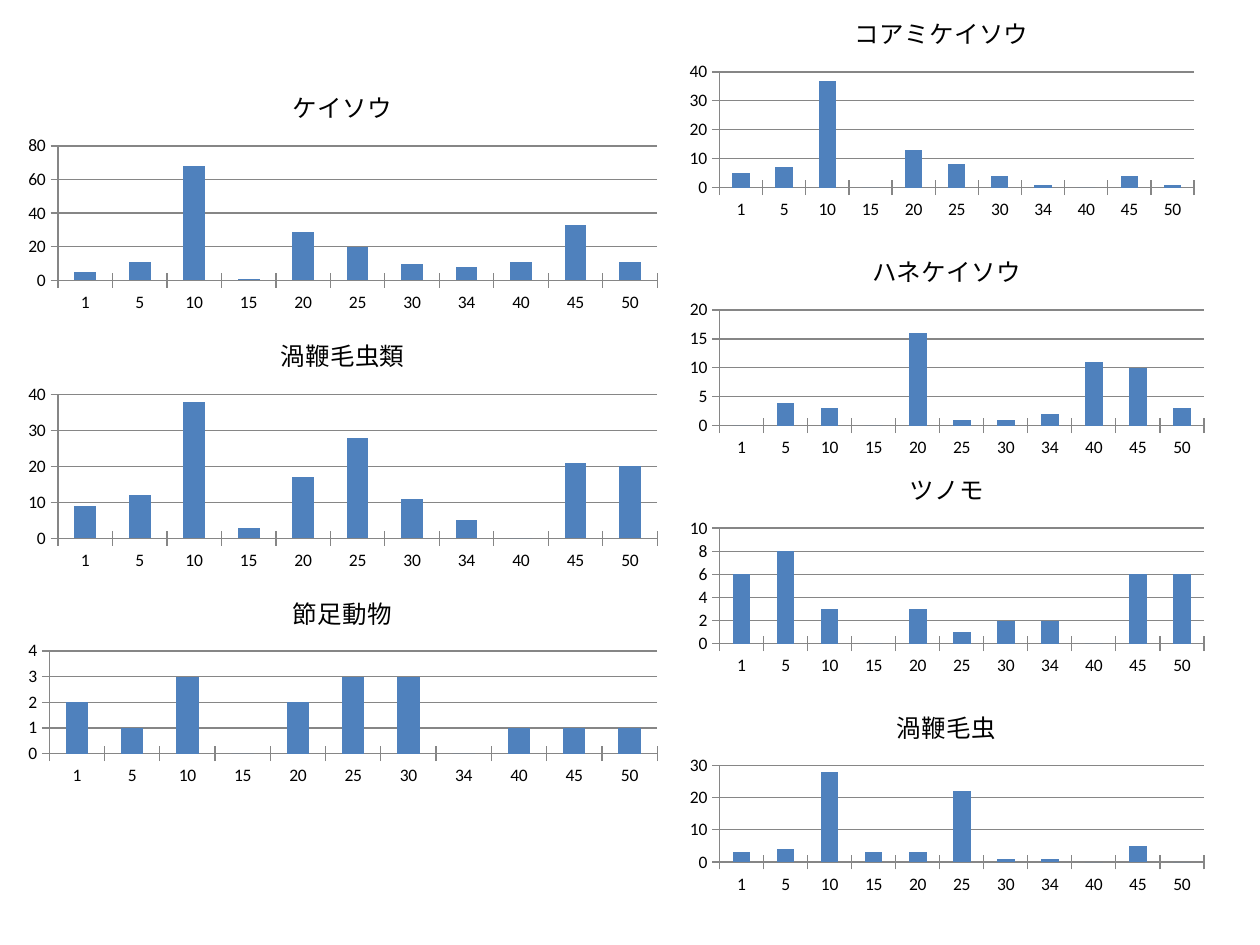
"""Build a slide of seven column charts of plankton counts."""
from dataclasses import dataclass

from pptx import Presentation
from pptx.chart.data import CategoryChartData
from pptx.dml.color import RGBColor
from pptx.enum import chart as ec
from pptx.util import Inches, Pt


@dataclass(frozen=True)
class Theme:
    font: str = "Calibri"
    label_size: Pt = Pt(10)
    title_size: Pt = Pt(14)
    ink: RGBColor = RGBColor(0, 0, 0)
    bar: RGBColor = RGBColor(0x4F, 0x81, 0xBD)
    rule: RGBColor = RGBColor(0x86, 0x86, 0x86)


theme = Theme()
depths = ["1", "5", "10", "15", "20", "25", "30", "34", "40", "45", "50"]
left_x, right_x = 0.12, 5.39
left_w, right_w = 5.2, 4.25

charts = [
    ("ケイソウ", (left_x, 0.55, left_w, 1.97), 80, 20,
     [5, 11, 68, 1, 29, 20, 10, 8, 11, 33, 11]),
    ("渦鞭毛虫類", (left_x, 2.52, left_w, 2.05), 40, 10,
     [9, 12, 38, 3, 17, 28, 11, 5, 0, 21, 20]),
    ("節足動物", (left_x, 4.57, left_w, 1.7), 4, 1,
     [2, 1, 3, 0, 2, 3, 3, 0, 1, 1, 1]),
    ("ツノモ", (right_x, 3.59, right_w, 1.81), 10, 2,
     [6, 8, 3, 0, 3, 1, 2, 2, 0, 6, 6]),
    ("コアミケイソウ", (right_x, -0.03, 4.17, 1.81), 40, 10,
     [5, 7, 37, 0, 13, 8, 4, 1, 0, 4, 1]),
    ("渦鞭毛虫", (right_x, 5.48, right_w, 1.65), 30, 10,
     [3, 4, 28, 3, 3, 22, 1, 1, 0, 5, 0]),
    ("ハネケイソウ", (right_x, 1.86, right_w, 1.81), 20, 5,
     [0, 4, 3, 0, 16, 1, 1, 2, 11, 10, 3]),
]

prs = Presentation()
prs.slide_width, prs.slide_height = Inches(10), Inches(7.5)
s = prs.slides.add_slide(prs.slide_layouts[6])

for name, box, top_value, step, counts in charts:
    data = CategoryChartData()
    data.categories = depths
    data.add_series(name, counts)
    chart = s.shapes.add_chart(
        ec.XL_CHART_TYPE.COLUMN_CLUSTERED, *map(Inches, box), data).chart
    chart.has_legend = False
    chart.font.name = theme.font
    chart.font.size = theme.label_size
    chart.font.color.rgb = theme.ink

    chart.has_title = True
    chart.chart_title.include_in_layout = False
    tf = chart.chart_title.text_frame
    tf.text = name
    p = tf.paragraphs[0]
    p.font.name = theme.font
    p.font.size = theme.title_size
    p.font.bold = False
    p.font.color.rgb = theme.ink

    plot = chart.plots[0]
    plot.gap_width = 150
    plot.vary_by_categories = False
    fill = plot.series[0].format.fill
    fill.solid()
    fill.fore_color.rgb = theme.bar

    values = chart.value_axis
    values.minimum_scale, values.maximum_scale = 0, top_value
    values.major_unit = step
    values.has_major_gridlines = True
    lines = [values.major_gridlines.format.line]
    for axis in (chart.category_axis, values):
        axis.major_tick_mark = ec.XL_TICK_MARK.CROSS
        axis.minor_tick_mark = ec.XL_TICK_MARK.NONE
        lines.append(axis.format.line)
    for line in lines:
        line.color.rgb = theme.rule
        line.width = Pt(0.75)

prs.save("out.pptx")
